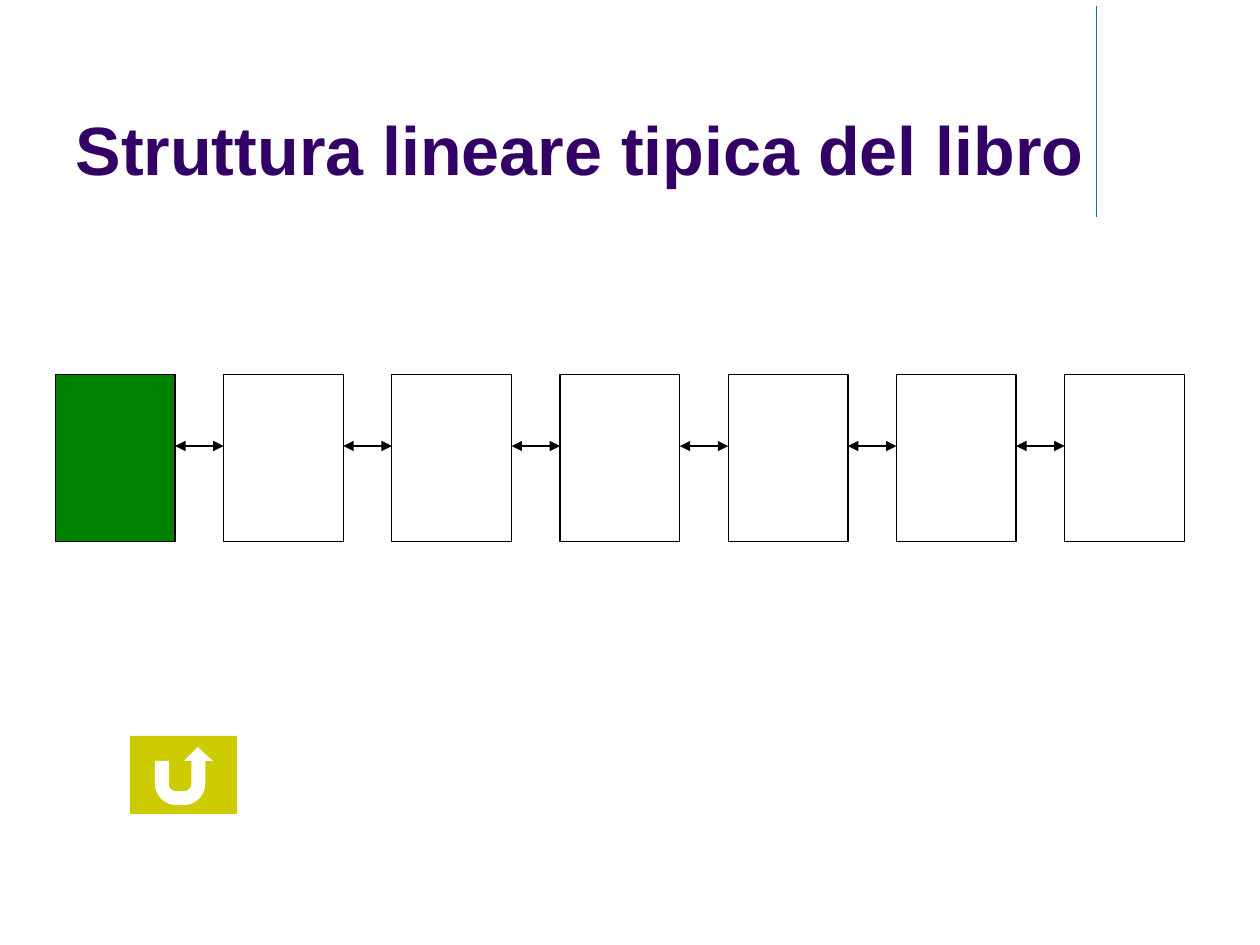
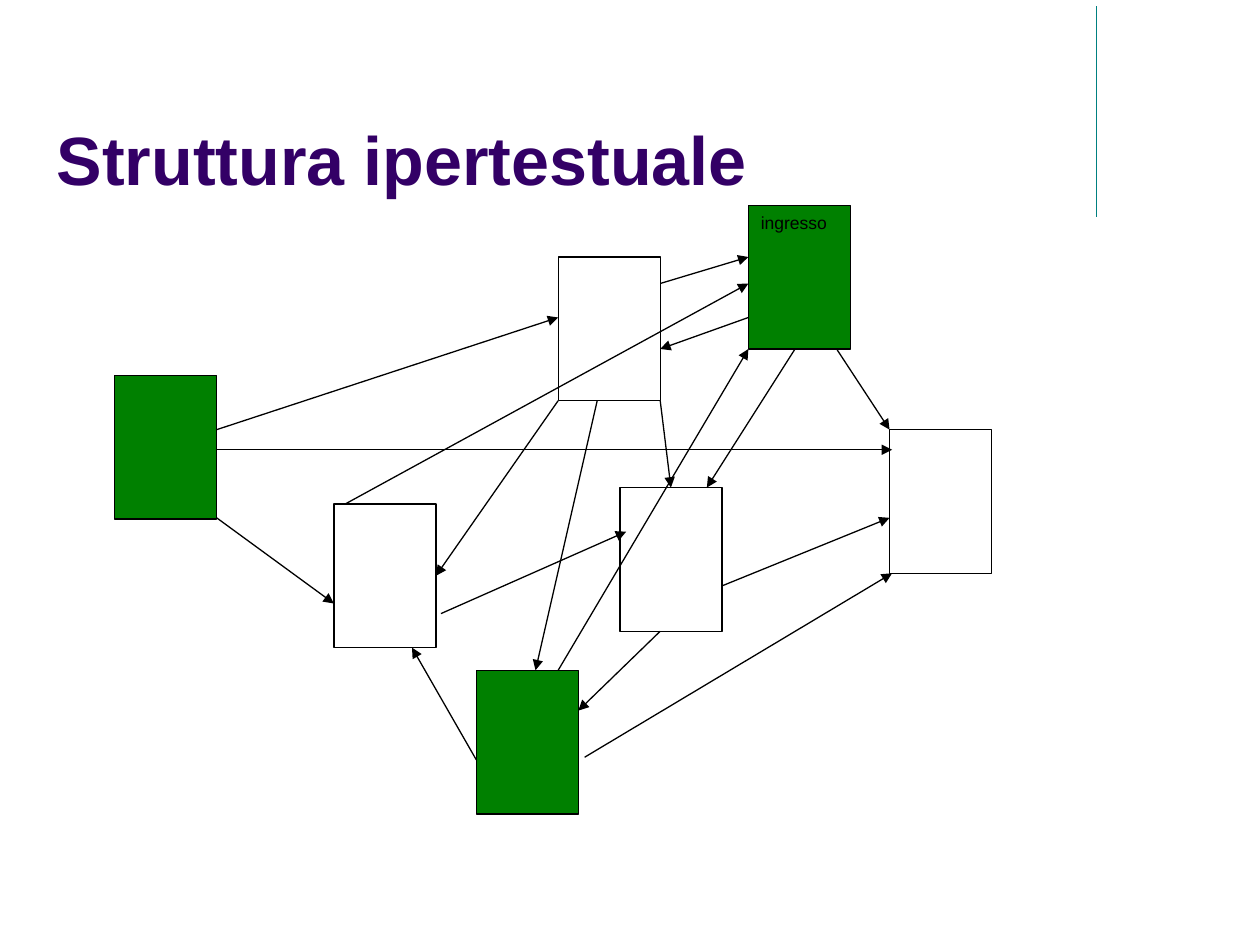
from math import cos, radians, sin

from lxml.etree import SubElement
from pptx import Presentation
from pptx.dml.color import RGBColor
from pptx.enum.shapes import MSO_CONNECTOR as Conn, MSO_SHAPE as Shape
from pptx.enum.text import MSO_ANCHOR as Anchor, MSO_AUTO_SIZE as Auto, PP_ALIGN as Align
from pptx.oxml.ns import qn
from pptx.util import Inches, Pt

PURPLE = RGBColor(0x33, 0x00, 0x66)
TEAL = RGBColor(0x00, 0x80, 0x80)
GREEN = RGBColor(0x00, 0x80, 0x00)
GOLD = RGBColor(0xCC, 0xCC, 0x00)
WHITE = RGBColor(0xFF, 0xFF, 0xFF)
BLACK = RGBColor(0x00, 0x00, 0x00)
FONT = "Arial"
TOP, LEFT, BOTTOM, RIGHT = range(4)

# Linear structure: a row of equal pages
BOOK = ("Struttura lineare tipica del libro", 0.5, 0.13)
PAGES = 7
FIRST, LAST = 0.44, 8.45
ROW = 2.97
PAGE = (0.95, 1.33)
LINK = 3.54

# Back button: left, top, size of its face
FACE = (1.03, 5.84, 0.85, 0.62)

# Hypertext structure: name -> left, top, fill, label
WEB = ("Struttura ipertestuale", 0.35, 0.21)
NODE = (0.81, 1.14)
NODES = {
    "entry": (5.94, 1.63, GREEN, "ingresso"),
    "start": (0.91, 2.98, GREEN, ""),
    "west": (2.65, 4, WHITE, ""),
    "centre": (4.92, 3.87, WHITE, ""),
    "north": (4.43, 2.04, WHITE, ""),
    "east": (7.06, 3.41, WHITE, ""),
    "south": (3.78, 5.32, GREEN, ""),
}
# Each end is a point, or a node's name and the side to join
LINKS = [
    ((1.72, 3.41), (4.43, 2.52)),
    ((4.43, 3.18), ("west", RIGHT)),
    ((4.74, 3.18), (4.25, 5.32)),
    ((5.24, 3.18), ("centre", TOP)),
    ((5.94, 2.52), (5.24, 2.77)),
    ((6.31, 2.77), (5.61, 3.87)),
    ((6.64, 2.77), (7.06, 3.41)),
    ((3.78, 6.03), (3.27, 5.14)),
    ((1.72, 4.11), (2.65, 4.79)),
    ((5.73, 4.65), (7.06, 4.11)),
    ((5.24, 5.01), (4.59, 5.64)),
    ((5.24, 2.25), (5.94, 2.04)),
    ((2.74, 4), (5.94, 2.25)),
    ((4.43, 5.32), (5.94, 2.77)),
    ((4.64, 6.01), (7.08, 4.55)),
    ((3.5, 4.87), (4.97, 4.22)),
    ((1.72, 3.57), (7.08, 3.57)),
]


def write(frame, text, size, color, bold=False):
    para = frame.paragraphs[0]
    para.alignment = Align.LEFT
    run = para.add_run()
    run.text = text
    font = run.font
    font.name, font.size, font.bold = FONT, Pt(size), bold
    font.color.rgb = color


def add_line(slide, start, end, color=BLACK, heads=()):
    """Draw a line; heads lists the arrowheads, headEnd before tailEnd."""
    line = slide.shapes.add_connector(Conn.STRAIGHT, *map(Inches, start + end))
    line.line.color.rgb = color
    line.line.width = Pt(0.75)
    for head in heads:
        SubElement(line.line._get_or_add_ln(), qn("a:" + head), type="triangle")
    SubElement(line._element.spPr, qn("a:effectLst"))
    return line


def paint(shape, fill, edge=None):
    shape.shadow.inherit = False
    shape.fill.solid()
    shape.fill.fore_color.rgb = fill
    if edge is None:
        shape.line.fill.background()
    else:
        shape.line.color.rgb = edge
        shape.line.width = Pt(0.75)


def add_box(slide, left, top, size, fill, label="", edge=BLACK):
    box = slide.shapes.add_shape(Shape.RECTANGLE, *map(Inches, (left, top, *size)))
    paint(box, fill, edge)
    if label:
        box.text_frame.vertical_anchor = Anchor.TOP
        write(box.text_frame, label, 10, BLACK)
    return box


def add_slide(deck, text, left, top):
    slide = deck.slides.add_slide(deck.slide_layouts[5])
    add_line(slide, (8.7, 0.05), (8.7, 1.72), TEAL)
    title = slide.shapes.title
    title.left, title.top = Inches(left), Inches(top)
    title.width, title.height = Inches(8.25), Inches(1.42)
    frame = title.text_frame
    frame.auto_size = Auto.NONE
    frame.vertical_anchor = Anchor.BOTTOM
    write(frame, text, 39, PURPLE, True)
    return slide


def arc(x, y, radius, start, end):
    """Points on a circle, from one angle in degrees to another."""
    angles = [radians(start + (end - start) * i / 8) for i in range(9)]
    return [(x + radius * cos(a), y + radius * sin(a)) for a in angles]


def add_button(slide):
    left, top, *size = FACE
    add_box(slide, left, top, size, GOLD, edge=None)
    arrow = [(1.23, 6.04), (1.34, 6.04),
             *arc(1.4, 6.22, 0.06, 180, 90), *arc(1.46, 6.22, 0.06, 90, 0),
             (1.52, 6.04), (1.46, 6.04), (1.57, 5.93), (1.69, 6.04), (1.63, 6.04),
             *arc(1.46, 6.22, 0.17, 0, 90), *arc(1.4, 6.22, 0.17, 90, 180)]
    points = [(Inches(x), Inches(y)) for x, y in arrow]
    pen = slide.shapes.build_freeform(*points[0])
    pen.add_line_segments(points[1:])
    paint(pen.convert_to_shape(), WHITE)


def add_book(deck):
    slide = add_slide(deck, *BOOK)
    pitch = (LAST - FIRST) / (PAGES - 1)
    for i in range(PAGES):
        left = FIRST + i * pitch
        add_box(slide, left, ROW, PAGE, WHITE if i else GREEN)
        if i:
            add_line(slide, (left - pitch + PAGE[0], LINK), (left, LINK),
                     heads=("headEnd", "tailEnd"))
    add_button(slide)


def add_web(deck):
    slide = add_slide(deck, *WEB)
    boxes = {name: add_box(slide, left, top, NODE, fill, label)
             for name, (left, top, fill, label) in NODES.items()}
    for start, end in LINKS:
        joined = end[0] in boxes
        line = add_line(slide, start, start if joined else end, heads=("tailEnd",))
        if joined:
            line.end_connect(boxes[end[0]], end[1])


def main():
    deck = Presentation()
    deck.slide_width, deck.slide_height = Inches(10), Inches(7.5)
    add_book(deck)
    add_web(deck)
    deck.save("out.pptx")


if __name__ == "__main__":
    main()
